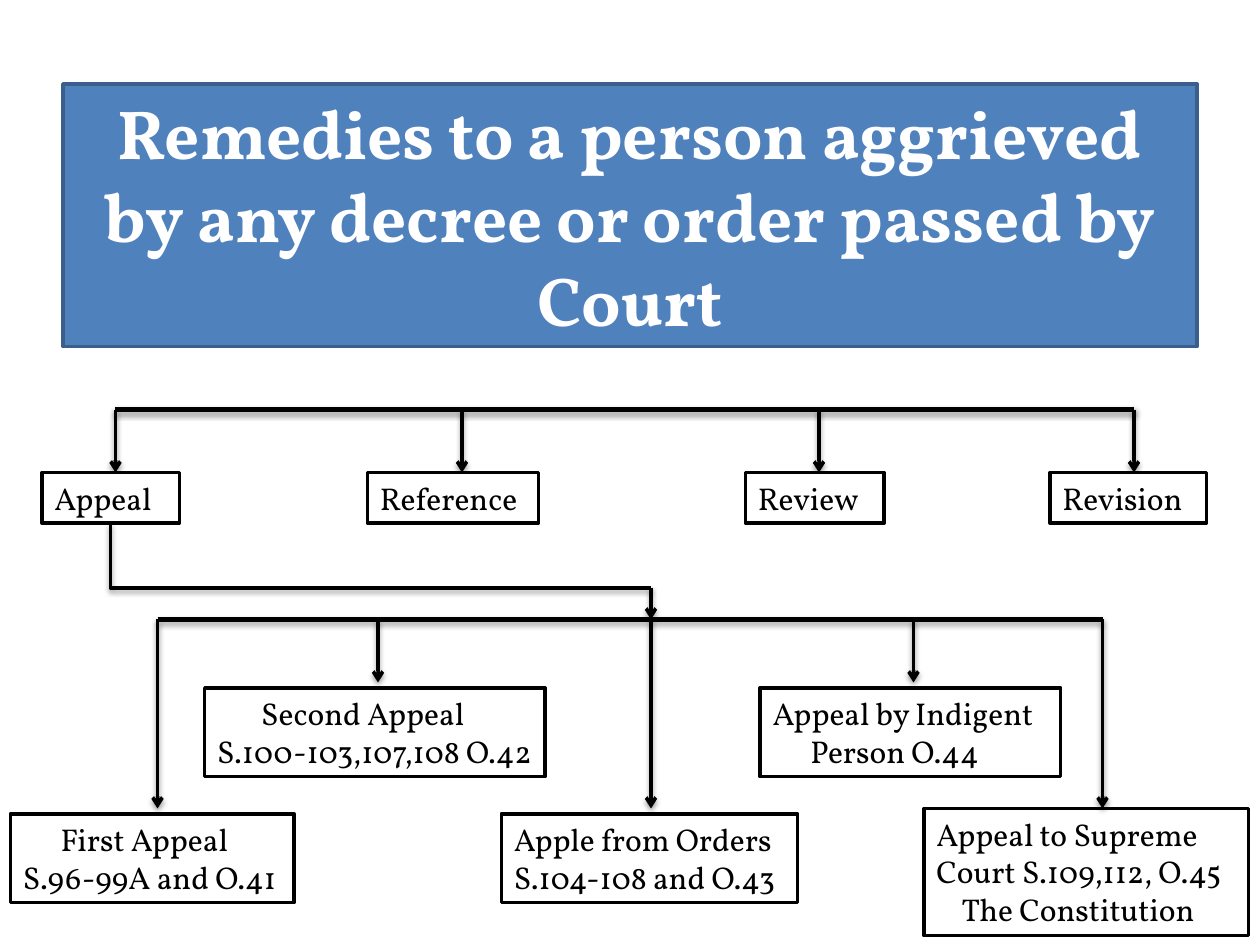
from lxml import etree
from pptx import Presentation
from pptx.dml.color import RGBColor
from pptx.enum.shapes import MSO_CONNECTOR, MSO_SHAPE
from pptx.enum.text import MSO_ANCHOR, PP_ALIGN
from pptx.oxml.ns import qn
from pptx.util import Emu, Inches, Pt

RECTANGLE = MSO_SHAPE.RECTANGLE
STRAIGHT, ELBOW = MSO_CONNECTOR.STRAIGHT, MSO_CONNECTOR.ELBOW
LEFT, CENTER = PP_ALIGN.LEFT, PP_ALIGN.CENTER
MIDDLE, TOP = MSO_ANCHOR.MIDDLE, MSO_ANCHOR.TOP

FONT = "Vollkorn"
COLORS = {"blue": "4F81BD", "navy": "3A5F8C", "white": "FFFFFF", "black": "000000"}
COLUMNS, ROWS = 120, 90
WIDTH, HEIGHT = Inches(10), Inches(7.5)
REMEDY_BAR, APPEAL_BAR = 39, 59
REMEDY_ROW, ELBOW_ROW = 45, 56
UPPER_ROW, LOWER_ROW = 65.5, 77.5
LINE_HEIGHT, PADDING = 3.64, 1.2

REMEDIES = [
    ("Appeal", 4, 13.1, 11),
    ("Reference", 35, 16.3, 44),
    ("Review", 71, 13.2, 78),
    ("Revision", 100, 14.9, 108),
]
APPEALS = [
    ([("First Appeal", 0.3), ("S.96-99A and O.41", 0)], 1, LOWER_ROW, 27, 15, 77),
    ([("Second Appeal", 0.35), ("S.100-103,107,108 O.42", 0)], 19.5, UPPER_ROW, 32.4, 36, 65),
    ([("Apple from Orders", 0), ("S.104-108 and O.43", 0)], 47.75, LOWER_ROW, 28.2, 62, 77),
    ([("Appeal by Indigent", 0), ("Person O.44", 0.3)], 72.4, UPPER_ROW, 28.6, 87, 65),
    ([("Appeal to Supreme", 0), ("Court S.109,112, O.45", 0), ("The Constitution", 0.2)],
     88, 77, 30.9, 105, 77),
]


def color(name):
    return RGBColor.from_string(COLORS[name])


def column(count):
    return Emu(round(WIDTH * count / COLUMNS))


def row(count):
    return Emu(round(HEIGHT * count / ROWS))


def add_text(paragraph, text, size=18, ink="black", bold=False, align=LEFT, indent=0):
    paragraph.alignment = align
    if indent:
        paragraph._p.get_or_add_pPr().set("marL", str(Inches(indent)))
    run = paragraph.add_run()
    run.text = text
    run.font.name = FONT
    run.font.size = Pt(size)
    run.font.bold = bold
    run.font.color.rgb = color(ink)


def add_box(slide, left, top, width, height, fill="white", border="black", anchor=TOP):
    shape = slide.shapes.add_shape(RECTANGLE, column(left), row(top), column(width), row(height))
    shape.shadow.inherit = False
    shape.fill.solid()
    shape.fill.fore_color.rgb = color(fill)
    shape.line.color.rgb = color(border)
    shape.line.width = Pt(2)
    frame = shape.text_frame
    frame.word_wrap = True
    frame.vertical_anchor = anchor
    return frame


def add_label(slide, lines, left, top, width):
    frame = add_box(slide, left, top, width, LINE_HEIGHT * len(lines) + PADDING)
    frame.margin_right = 0
    for index, (text, indent) in enumerate(lines):
        paragraph = frame.add_paragraph() if index else frame.paragraphs[0]
        add_text(paragraph, text, indent=indent)


def add_shadow(properties, opacity, distance):
    effects = etree.SubElement(properties, qn("a:effectLst"))
    shadow = etree.SubElement(effects, qn("a:outerShdw"), blurRad=str(Pt(3.1)),
                              dist=str(Pt(distance)), dir="5400000", rotWithShape="0")
    ink = etree.SubElement(shadow, qn("a:srgbClr"), val=COLORS["black"])
    etree.SubElement(ink, qn("a:alpha"), val=str(opacity * 1000))


def add_line(slide, start, end, kind=STRAIGHT, width=2, arrow=False, opacity=38, distance=1.6):
    connector = slide.shapes.add_connector(
        kind, column(start[0]), row(start[1]), column(end[0]), row(end[1]))
    connector.line.color.rgb = color("black")
    connector.line.width = Pt(width)
    if arrow:
        etree.SubElement(connector.line._get_or_add_ln(), qn("a:tailEnd"), type="arrow")
    add_shadow(connector._element.spPr, opacity, distance)
    return connector


def add_bar(slide, first, last, level):
    add_line(slide, (first, level), (last, level), width=3, opacity=35, distance=1.8)


def add_corner(slide, start, end):
    connector = add_line(slide, start, end, kind=ELBOW)
    across, down = connector.width, connector.height
    connector.left += (across - down) // 2
    connector.top += (down - across) // 2
    connector.width, connector.height = down, across
    properties = connector._element.spPr
    transform = properties.find(qn("a:xfrm"))
    transform.set("rot", str(270 * 60000))
    transform.set("flipH", "1")
    properties.find(qn("a:prstGeom")).set("prst", "bentConnector2")


def add_title(slide, text):
    frame = add_box(slide, 6, 8, 108, 25, fill="blue", border="navy", anchor=MIDDLE)
    add_text(frame.paragraphs[0], text, size=39.6, ink="white", bold=True, align=CENTER)


def add_remedies(slide):
    add_bar(slide, REMEDIES[0][-1], REMEDIES[-1][-1], REMEDY_BAR)
    for text, left, width, center in REMEDIES:
        add_line(slide, (center, REMEDY_BAR), (center, REMEDY_ROW), arrow=True)
        add_label(slide, [(text, 0)], left, REMEDY_ROW, width)


def add_appeals(slide):
    add_corner(slide, (10.5, 49.8), (62, ELBOW_ROW))
    add_line(slide, (62, ELBOW_ROW), (62, APPEAL_BAR), arrow=True)
    add_bar(slide, APPEALS[0][-2], APPEALS[-1][-2], APPEAL_BAR)
    for lines, left, top, width, center, tip in APPEALS:
        add_label(slide, lines, left, top, width)
        add_line(slide, (center, APPEAL_BAR), (center, tip), arrow=True)


def main():
    presentation = Presentation()
    presentation.slide_width, presentation.slide_height = WIDTH, HEIGHT
    slide = presentation.slides.add_slide(presentation.slide_layouts[6])
    add_title(slide, "Remedies to a person aggrieved by any decree or order passed by Court")
    add_remedies(slide)
    add_appeals(slide)
    presentation.save("out.pptx")


if __name__ == "__main__":
    main()
